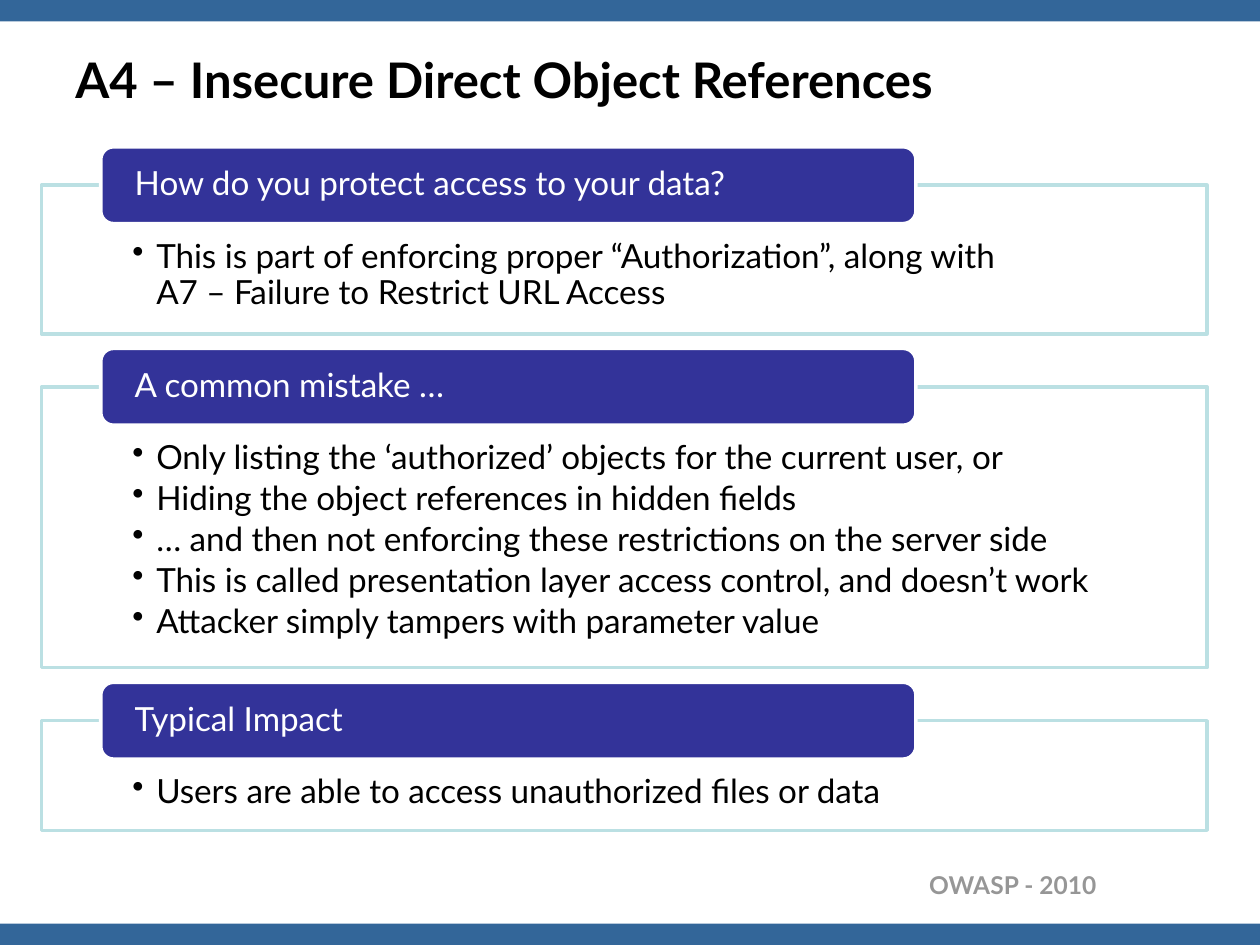
from lxml.etree import SubElement
from pptx import Presentation
from pptx.dml.color import RGBColor
from pptx.enum.shapes import MSO_SHAPE as Shape
from pptx.enum.text import MSO_ANCHOR as Anchor, PP_ALIGN as Align
from pptx.oxml.ns import qn
from pptx.util import Inches, Pt

COLORS = {
    "band": "336699", "heading": "333399", "frame": "BBE0E3",
    "white": "FFFFFF", "black": "000000", "footer": "969696",
}
FONT = "Lato"
WIDTH, HEIGHT = 10, 7.5
BAND_HEIGHT = 0.17
FRAME_LEFT, FRAME_WIDTH, FRAME_TOP, FRAME_GAP = 0.33, 9.25, 1.47, 0.42
HEADING_LEFT, HEADING_WIDTH, HEADING_HEIGHT = 0.8, 6.47, 0.61
BODY_SIZE, LINE_SPACING, HANGING = 19, 0.9, 0.19

SECTIONS = [
    ("How do you protect access to your data?", 1.18, [
        "This is part of enforcing proper “Authorization”, along with \n"
        "A7 – Failure to Restrict URL Access",
    ]),
    ("A common mistake …", 2.23, [
        "Only listing the ‘authorized’ objects for the current user, or",
        "Hiding the object references in hidden fields",
        "… and then not enforcing these restrictions on the server side",
        "This is called presentation layer access control, and doesn’t work",
        "Attacker simply tampers with parameter value",
    ]),
    ("Typical Impact", 0.87, [
        "Users are able to access unauthorized files or data",
    ]),
]


def color(key):
    """Return the named colour."""
    return RGBColor.from_string(COLORS[key])


def add_panel(slide, outline, box, fill, border=None):
    """Add a flat filled shape with an optional border."""
    panel = slide.shapes.add_shape(outline, *map(Inches, box))
    panel.shadow.inherit = False
    panel.fill.solid()
    panel.fill.fore_color.rgb = color(fill)
    if border:
        panel.line.color.rgb = color(border)
        panel.line.width = Pt(2)
    else:
        panel.line.fill.background()
    return panel


def set_frame(frame, anchor, insets):
    """Set wrapping, anchor and the left, top, right and bottom insets."""
    frame.word_wrap = True
    frame.vertical_anchor = anchor
    (frame.margin_left, frame.margin_top,
     frame.margin_right, frame.margin_bottom) = map(Inches, insets)


def write(paragraph, text, size, ink, bold=False, align=Align.LEFT):
    """Write text run by run, with a line break at each newline."""
    paragraph.alignment = align
    for index, line in enumerate(text.split("\n")):
        if index:
            paragraph.add_line_break()
        run = paragraph.add_run()
        run.text = line
        run.font.name = FONT
        run.font.size = Pt(size)
        run.font.bold = bold
        run.font.color.rgb = color(ink)


def add_label(slide, box, text, size, ink, anchor, align):
    """Add a bold one-line text box."""
    frame = slide.shapes.add_textbox(*map(Inches, box)).text_frame
    set_frame(frame, anchor, (0.1, 0.05, 0.1, 0.05))
    write(frame.paragraphs[0], text, size, ink, True, align)


def add_bullet(paragraph):
    """Give a paragraph a hanging round bullet."""
    properties = paragraph._p.get_or_add_pPr()
    properties.set("marL", str(Inches(HANGING)))
    properties.set("indent", str(-Inches(HANGING)))
    SubElement(properties, qn("a:buChar")).set("char", "•")


def add_points(slide, top, height, points):
    """Add the framed list of a section."""
    box = (FRAME_LEFT, top, FRAME_WIDTH, height)
    panel = add_panel(slide, Shape.RECTANGLE, box, "white", "frame")
    fill = panel._element.spPr.find(qn("a:solidFill"))
    SubElement(fill[0], qn("a:alpha")).set("val", "90000")
    frame = panel.text_frame
    set_frame(frame, Anchor.TOP, (0.72, 0.43, 0.72, 0.15))
    for index, point in enumerate(points):
        paragraph = frame.add_paragraph() if index else frame.paragraphs[0]
        add_bullet(paragraph)
        paragraph.line_spacing = LINE_SPACING
        paragraph.space_after = Pt(0.15 * BODY_SIZE)
        write(paragraph, point, BODY_SIZE, "black")


def add_heading(slide, frame_top, text):
    """Add a section heading centred on the top edge of its frame."""
    box = (HEADING_LEFT, frame_top - HEADING_HEIGHT / 2, HEADING_WIDTH, HEADING_HEIGHT)
    panel = add_panel(slide, Shape.ROUNDED_RECTANGLE, box, "heading", "white")
    set_frame(panel.text_frame, Anchor.MIDDLE, (0.24, 0, 0.24, 0))
    paragraph = panel.text_frame.paragraphs[0]
    paragraph.line_spacing = LINE_SPACING
    write(paragraph, text, BODY_SIZE, "white")


def main():
    """Build the slide and save it."""
    deck = Presentation()
    deck.slide_width, deck.slide_height = Inches(WIDTH), Inches(HEIGHT)
    slide = deck.slides.add_slide(deck.slide_layouts[6])
    for band_top in (0, HEIGHT - BAND_HEIGHT):
        add_panel(slide, Shape.RECTANGLE, (0, band_top, WIDTH, BAND_HEIGHT), "band")
    add_label(slide, (5.42, 6.86, 3.38, 0.34), "OWASP - 2010", 14, "footer",
              Anchor.TOP, Align.RIGHT)
    add_label(slide, (0.5, 0.19, 9, 0.87), "A4 – Insecure Direct Object References",
              28, "black", Anchor.MIDDLE, Align.LEFT)
    top = FRAME_TOP
    for heading, height, points in SECTIONS:
        add_points(slide, top, height, points)
        add_heading(slide, top, heading)
        top += height + FRAME_GAP
    deck.save("out.pptx")


if __name__ == "__main__":
    main()
